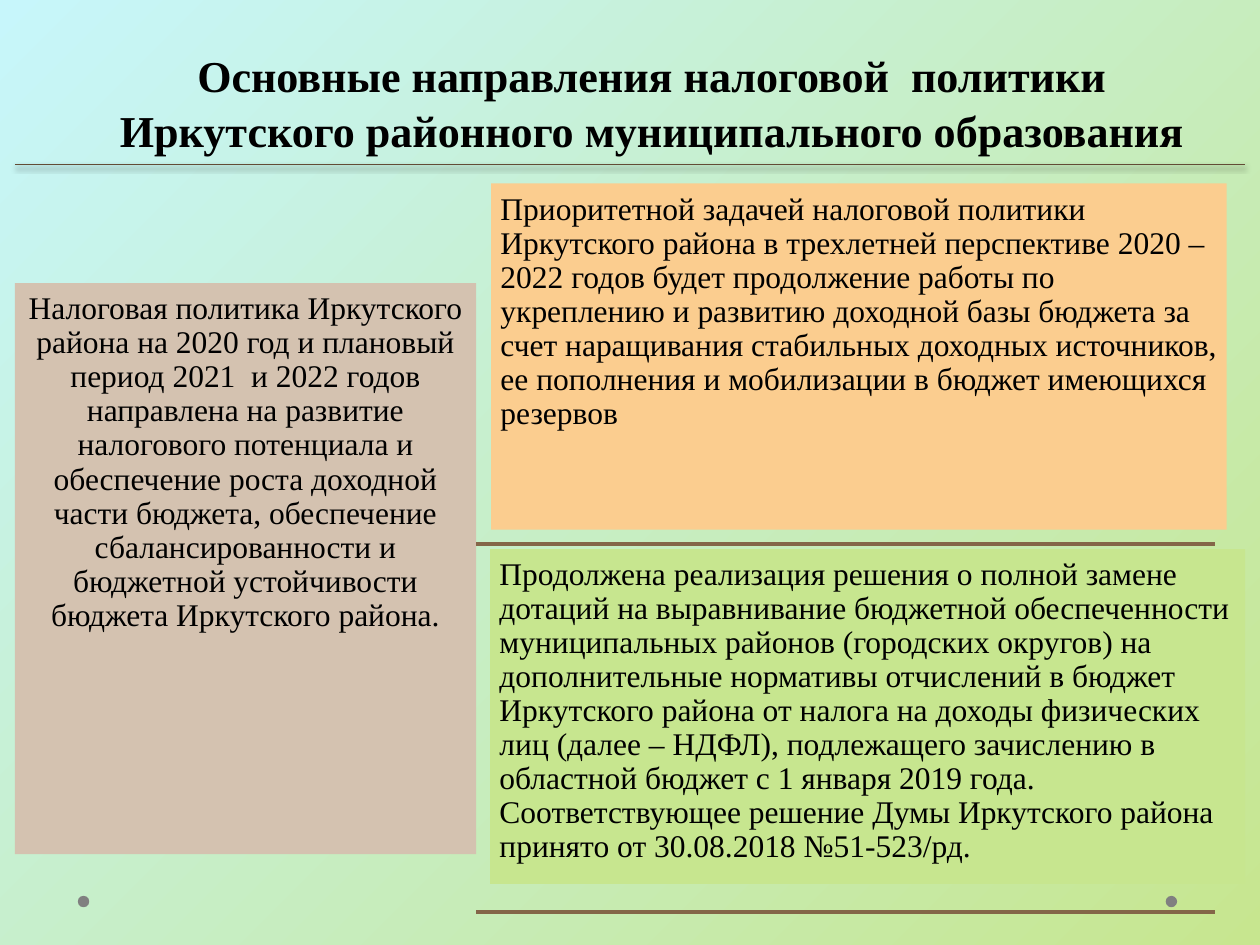
from lxml import etree
from pptx import Presentation
from pptx import util as u
from pptx.dml.color import RGBColor
from pptx.enum import shapes, text
from pptx.oxml import ns

SKY = RGBColor(0xC7, 0xF6, 0xFB)
LIME = RGBColor(0xC7, 0xE6, 0x8F)
BEIGE = RGBColor(0xD4, 0xC2, 0xB0)
PEACH = RGBColor(0xFB, 0xCD, 0x8F)
BROWN = RGBColor(0x84, 0x66, 0x48)
DARK_BROWN = RGBColor(0x62, 0x4B, 0x35)
GRAY = RGBColor(0x80, 0x80, 0x80)
BLACK = RGBColor(0, 0, 0)
FONT = "Times New Roman"


def style_text(frame, content, size, align, spacing, bold=False):
    frame.word_wrap = True
    frame.text = content
    para = frame.paragraphs[0]
    para.alignment = align
    para.line_spacing = spacing
    font = para.runs[0].font
    font.name = FONT
    font.size = u.Pt(size)
    font.bold = bold
    font.color.rgb = BLACK


def add_rule(page, left, right, top, color, width):
    rule = page.shapes.add_connector(
        shapes.MSO_CONNECTOR.STRAIGHT, u.Cm(left), u.Cm(top), u.Cm(right), u.Cm(top))
    rule.line.color.rgb = color
    rule.line.width = u.Pt(width)
    return etree.SubElement(rule._element.spPr, ns.qn("a:effectLst"))


deck = Presentation()
deck.slide_width = u.Cm(25.4)
deck.slide_height = u.Cm(19.05)
page = deck.slides.add_slide(deck.slide_layouts[6])

backdrop = page.background.fill
backdrop.gradient()
backdrop.gradient_angle = 315
for stop, color in zip(backdrop.gradient_stops, (SKY, LIME)):
    stop.color.rgb = color

for left in (1.57, 23.5):
    dot = page.shapes.add_shape(
        shapes.MSO_SHAPE.OVAL, u.Cm(left), u.Cm(18.06), u.Cm(0.23), u.Cm(0.23))
    dot.shadow.inherit = False
    dot.fill.solid()
    dot.fill.fore_color.rgb = GRAY
    dot.line.fill.background()

title = page.shapes.add_textbox(u.Cm(1.9), u.Cm(0.53), u.Cm(22.48), u.Cm(2.75))
title.text_frame.vertical_anchor = text.MSO_ANCHOR.BOTTOM
style_text(
    title.text_frame,
    "Основные направления налоговой  политики Иркутского районного муниципального образования",
    25.2, text.PP_ALIGN.CENTER, 1.05, bold=True)

effects = add_rule(page, 0.3, 25.1, 3.32, DARK_BROWN, 0.75)
shadow = etree.SubElement(
    effects, ns.qn("a:outerShdw"), blurRad=str(u.Pt(3.1)), dist=str(u.Pt(1.8)),
    dir="5400000", rotWithShape="0")
shade = etree.SubElement(shadow, ns.qn("a:srgbClr"), val="000000")
etree.SubElement(shade, ns.qn("a:alpha"), val="35000")

panels = [
    (0.3, 5.71, 9.3, 11.51, BEIGE, text.PP_ALIGN.CENTER,
     "Налоговая политика Иркутского района на 2020 год и плановый период 2021  и 2022 годов "
     "направлена на развитие налогового потенциала и обеспечение роста доходной части бюджета, "
     "обеспечение сбалансированности и бюджетной устойчивости бюджета Иркутского района."),
    (9.9, 3.7, 14.83, 6.98, PEACH, text.PP_ALIGN.LEFT,
     "Приоритетной задачей налоговой политики Иркутского района в трехлетней перспективе "
     "2020 – 2022 годов будет продолжение работы по укреплению и развитию доходной базы бюджета "
     "за счет наращивания стабильных доходных источников, ее пополнения и мобилизации в бюджет "
     "имеющихся резервов"),
    (9.88, 11.07, 15.22, 6.75, LIME, text.PP_ALIGN.LEFT,
     "Продолжена реализация решения о полной замене дотаций на выравнивание бюджетной "
     "обеспеченности муниципальных районов (городских округов) на дополнительные нормативы "
     "отчислений в бюджет Иркутского района от налога на доходы физических лиц (далее – НДФЛ), "
     "подлежащего зачислению в областной бюджет с 1 января 2019 года. Соответствующее решение "
     "Думы Иркутского района принято от 30.08.2018 №51-523/рд."),
]
for left, top, width, height, color, align, content in panels:
    panel = page.shapes.add_shape(
        shapes.MSO_SHAPE.RECTANGLE, u.Cm(left), u.Cm(top), u.Cm(width), u.Cm(height))
    panel.shadow.inherit = False
    panel.fill.solid()
    panel.fill.fore_color.rgb = color
    panel.line.fill.background()
    frame = panel.text_frame
    frame.margin_left = frame.margin_right = u.Cm(0.19)
    frame.margin_top = frame.margin_bottom = u.Cm(0.19)
    frame.vertical_anchor = text.MSO_ANCHOR.TOP
    style_text(frame, content, 18, align, 0.9)

for top in (10.97, 18.39):
    add_rule(page, 9.6, 24.49, top, BROWN, 2.25)

deck.save("out.pptx")
